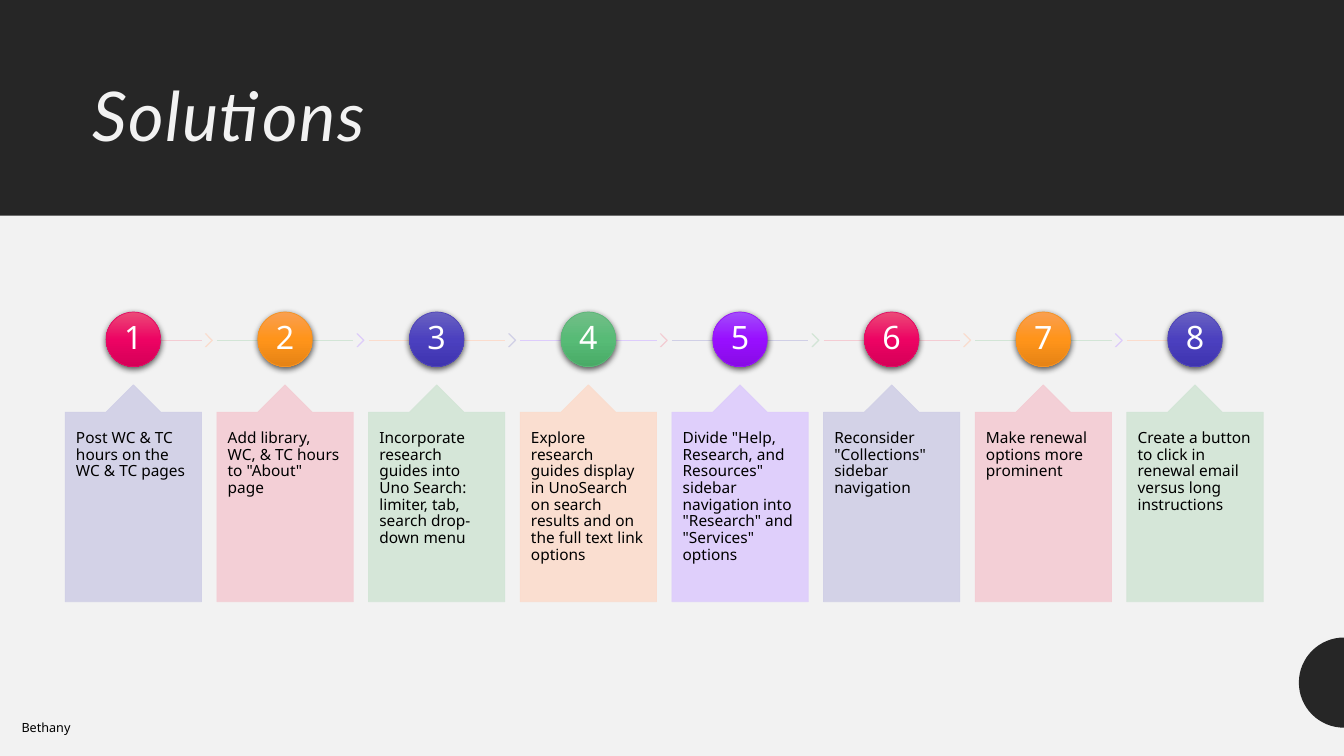
from copy import deepcopy
from math import cos, pi, sin

from lxml.etree import SubElement
from pptx import Presentation
from pptx.dml.color import RGBColor
from pptx.enum.shapes import MSO_CONNECTOR, MSO_SHAPE
from pptx.enum.text import MSO_ANCHOR, PP_ALIGN
from pptx.oxml.ns import qn
from pptx.util import Pt

DARK = RGBColor(0x26, 0x26, 0x26)
PALE = RGBColor(0xF2, 0xF2, 0xF2)
BLACK = RGBColor(0, 0, 0)
WHITE = RGBColor(0xFF, 0xFF, 0xFF)
PINK = RGBColor(0xF4, 0xCC, 0xD3)
GREEN = RGBColor(0xD2, 0xE5, 0xD6)
PEACH = RGBColor(0xFB, 0xDC, 0xCD)
VIOLET = RGBColor(0xDD, 0xCC, 0xFC)
LILAC = RGBColor(0xD0, 0xCF, 0xE6)
TINTS = [PINK, GREEN, PEACH, VIOLET, LILAC]

# Top, middle and bottom of each ball, then its rim
BALLS = [
    [RGBColor.from_string(code) for code in row.split()]
    for row in (
        "EB4B78 ED0363 D50058 E20E65",
        "F99F51 FF941A E58315 F59324",
        "6962C1 4B40BF 3F34AF 5046B9",
        "72BE88 57BB76 49AB67 5CB678",
        "A24DFB 980FFF 880BE5 9717F7",
    )
]

STEPS = [
    "Post WC & TC hours on the WC & TC pages",
    'Add library, WC, & TC hours to "About" page',
    "Incorporate research guides into Uno Search: limiter, tab, search drop-down menu",
    "Explore research guides display in UnoSearch on search results and on the full text link options",
    'Divide "Help, Research, and Resources" sidebar navigation into "Research" and "Services" options',
    'Reconsider "Collections" sidebar navigation',
    "Make renewal options more prominent",
    "Create a button to click in renewal email versus long instructions",
]

LEFT, PITCH, WIDE = 46.6, 108.33, 97.4
BALL, AXIS = 39, 242.4


def tint(shape, color):
    """Give a shape a fill and thin line of one colour, at 90% opacity."""
    shape.shadow.inherit = False
    shape.fill.solid()
    shape.fill.fore_color.rgb = color
    shape.line.color.rgb = color
    shape.line.width = Pt(0.5)
    for node in shape._element.spPr.iter(qn("a:srgbClr")):
        SubElement(node, qn("a:alpha"), val="90000")


def write(shape, text, size, color, font="Noto Sans", inset=(7.2, 3.6), spacing=0.9):
    frame = shape.text_frame
    frame.word_wrap = True
    frame.margin_left = frame.margin_right = Pt(inset[0])
    frame.margin_top = frame.margin_bottom = Pt(inset[1])
    para = frame.paragraphs[0]
    para.alignment = PP_ALIGN.LEFT
    para.line_spacing = spacing
    run = para.add_run()
    run.text = text
    run.font.name = font
    run.font.size = Pt(size)
    run.font.color.rgb = color
    return frame, para, run


deck = Presentation()
deck.slide_width, deck.slide_height = Pt(960), Pt(540)
slide = deck.slides.add_slide(deck.slide_layouts[6])
slide.background.fill.solid()
slide.background.fill.fore_color.rgb = PALE
shapes = slide.shapes

# Header band and title
band = shapes.add_shape(MSO_SHAPE.RECTANGLE, 0, 0, Pt(960), Pt(154))
band.shadow.inherit = False
band.fill.solid()
band.fill.fore_color.rgb = DARK
band.line.fill.background()

title = shapes.add_textbox(Pt(59), Pt(39.6), Pt(841), Pt(75.6))
frame, para, run = write(title, "Solutions", 49, PALE, "Lato")
frame.vertical_anchor = MSO_ANCHOR.BOTTOM
run.font.italic = True
run.font._element.set("spc", "100")

# Half disc at the right edge
arc = [
    (Pt(960 - 32.2 * sin(pi * k / 32)), Pt(487.6 - 32.2 * cos(pi * k / 32)))
    for k in range(33)
]
pen = shapes.build_freeform(*arc[0])
pen.add_line_segments(arc[1:], close=True)
disc = pen.convert_to_shape()
disc.shadow.inherit = False
disc.fill.solid()
disc.fill.fore_color.rgb = DARK
disc.line.fill.background()

# Numbered steps
last = len(STEPS) - 1
for i, step in enumerate(STEPS):
    x = LEFT + i * PITCH
    mid = x + WIDE / 2

    start = mid if i == 0 else x
    end = mid if i == last else x + WIDE
    bar = shapes.add_connector(
        MSO_CONNECTOR.STRAIGHT, Pt(start), Pt(AXIS + 0.4), Pt(end), Pt(AXIS + 0.4)
    )
    bar.line.color.rgb = TINTS[i % 5]
    bar.line.width = Pt(0.5)
    SubElement(bar._element.spPr, qn("a:effectLst"))

    if i < last:
        arrow = shapes.add_shape(
            MSO_SHAPE.CHEVRON, Pt(x + 100), Pt(AXIS - 4), Pt(5.2), Pt(9.4)
        )
        arrow.adjustments[0] = 0.9
        tint(arrow, TINTS[(i + 2) % 5])

    ball = shapes.add_shape(
        MSO_SHAPE.OVAL, Pt(mid - BALL / 2), Pt(AXIS - BALL / 2), Pt(BALL), Pt(BALL)
    )
    *shades, rim = BALLS[i % 5]
    ball.fill.gradient()
    ball.fill.gradient_angle = 270
    stops = ball._element.spPr.find(".//" + qn("a:gsLst"))
    stops.append(deepcopy(stops[0]))
    for stop, shade, place in zip(ball.fill.gradient_stops, shades, (0, 0.5, 1)):
        stop.color.rgb = shade
        stop.position = place
    ball.line.color.rgb = rim
    ball.line.width = Pt(0.5)
    ball.shadow.inherit = False
    glow = SubElement(
        ball._element.spPr.find(qn("a:effectLst")), qn("a:outerShdw"),
        blurRad=str(Pt(4.5)), dist=str(Pt(1.5)), dir="5400000", rotWithShape="0",
    )
    shade = SubElement(glow, qn("a:srgbClr"), val="000000")
    SubElement(shade, qn("a:alpha"), val="63000")
    frame, para, run = write(ball, str(i + 1), 23, WHITE, inset=(1.4, 1.4))
    frame.vertical_anchor = MSO_ANCHOR.MIDDLE
    para.alignment = PP_ALIGN.CENTER

    card = shapes.add_shape(
        MSO_SHAPE.UP_ARROW_CALLOUT, Pt(x), Pt(274.9), Pt(WIDE), Pt(154.9)
    )
    for k, ratio in enumerate((0.5, 0.2, 0.2, 1)):
        card.adjustments[k] = ratio
    tint(card, TINTS[(i - 1) % 5])
    frame, para, run = write(card, step, 11, BLACK, inset=(7.7, 13))
    frame.vertical_anchor = MSO_ANCHOR.TOP

name = shapes.add_textbox(Pt(8.3), Pt(510.6), Pt(52), Pt(18))
write(name, "Bethany", 9, BLACK, spacing=1)

deck.save("out.pptx")
